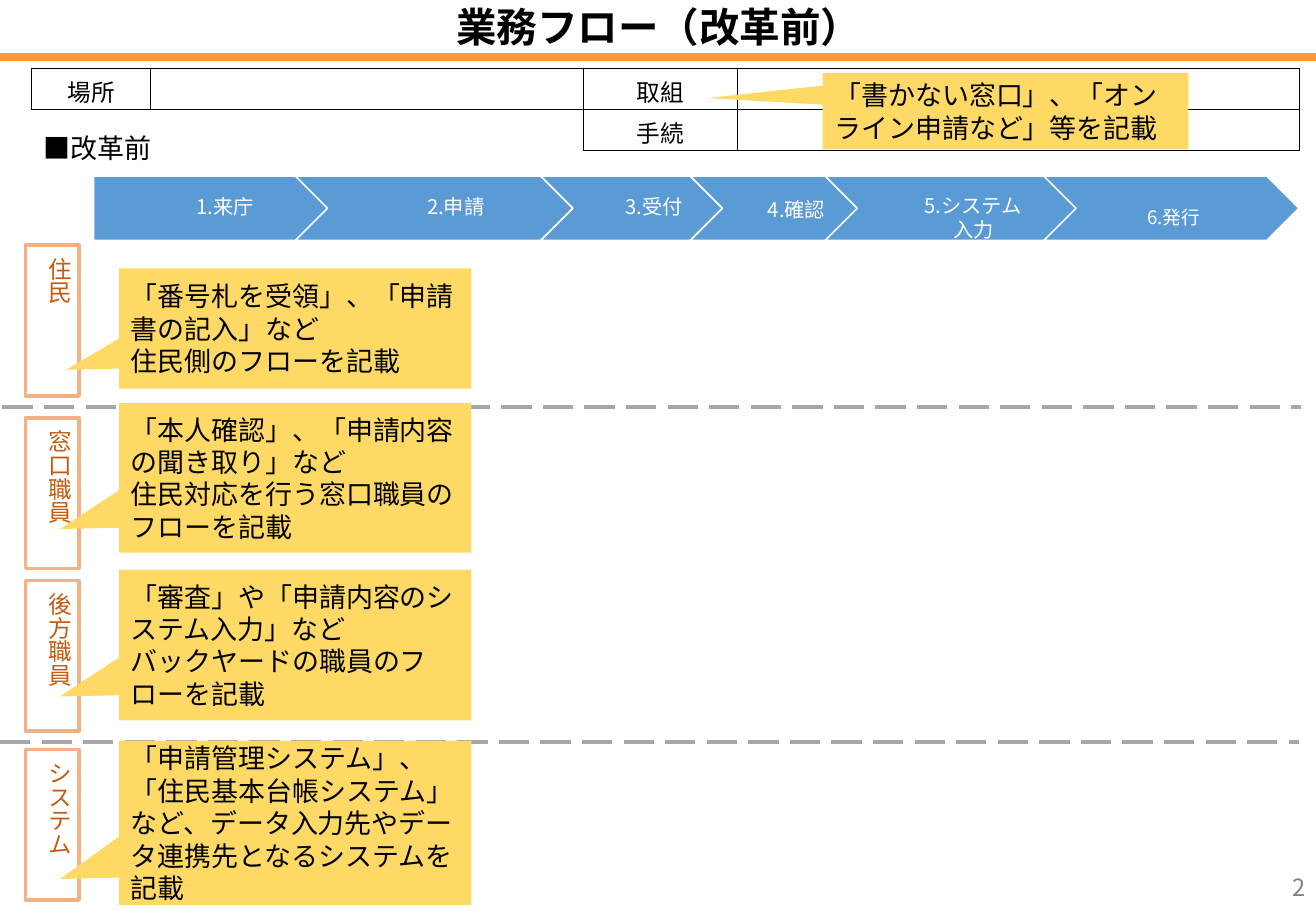
"""Build the pre-reform workflow slide with its step arrows, lanes and callouts."""
from dataclasses import dataclass

from lxml import etree
from pptx import Presentation
from pptx.dml.color import RGBColor
from pptx.enum.dml import MSO_LINE
from pptx.enum.shapes import MSO_CONNECTOR, MSO_SHAPE
from pptx.enum.text import MSO_ANCHOR, PP_ALIGN
from pptx.oxml.ns import qn
from pptx.util import Inches, Pt

RECT, CALLOUT = MSO_SHAPE.RECTANGLE, MSO_SHAPE.RECTANGULAR_CALLOUT
PENTAGON, CHEVRON = MSO_SHAPE.PENTAGON, MSO_SHAPE.CHEVRON
LEFT, CENTER, RIGHT = PP_ALIGN.LEFT, PP_ALIGN.CENTER, PP_ALIGN.RIGHT
TOP, MIDDLE = MSO_ANCHOR.TOP, MSO_ANCHOR.MIDDLE
STRAIGHT, LONG_DASH = MSO_CONNECTOR.STRAIGHT, MSO_LINE.LONG_DASH

CJK, LATIN = "Noto Sans CJK JP", "Calibri"
BLACK, WHITE, GRAY, DASH_GRAY = "000000", "FFFFFF", "808080", "A6A6A6"
ORANGE, PEACH, BROWN = "FF9933", "F4B183", "C55A11"
BLUE, YELLOW = "5B9BD5", "FFD966"
MARGINS = (0.1, 0.05, 0.1, 0.05)
STEP_TOP, STEP_HEIGHT = 1.45, 0.53
LANE_LEFT, LANE_WIDTH, LANE_HEIGHT = 0.21, 0.44, 1.24


@dataclass
class Style:
    size: float
    color: str = BLACK
    font: str = CJK
    align: PP_ALIGN = LEFT
    anchor: MSO_ANCHOR = MIDDLE
    bold: bool = False
    spacing: float | Pt | None = None
    after: float = 0
    margins: tuple[float, ...] = MARGINS


@dataclass
class Step:
    left: float
    width: float
    text_left: float
    text_width: float
    text: str
    style: Style


@dataclass
class Lane:
    top: float
    text: str


@dataclass
class Callout:
    box: tuple[float, float, float, float]
    tip: tuple[float, float]
    text: str


@dataclass
class Rule:
    start: float
    end: float
    y: float
    color: str
    width: float
    dashed: bool = True


@dataclass
class Grid:
    left: float
    widths: tuple[float, ...]
    labels: tuple[str, ...]


def step_style(top: float = 0.04, left: float = 0.05, bottom: float = 0.04, size: float = 12,
               spacing: float | Pt = 0.9, after: float = 0, anchor: MSO_ANCHOR = MIDDLE) -> Style:
    return Style(size, WHITE, align=CENTER, anchor=anchor, spacing=spacing, after=after,
                 margins=(left, top, 0.02, bottom))


HEADING = Style(24, align=CENTER, bold=True, spacing=0.9)
LABEL = Style(14, align=CENTER)
SECTION = Style(16, anchor=TOP)
LANE = Style(14, BROWN, anchor=TOP, margins=(0.05, 0.1, 0.04, 0.1))
NOTE = Style(16, font=LATIN)
PAGE = Style(14, GRAY, align=RIGHT)

HEADER_RULE = Rule(0, 10.83, 0.47, ORANGE, 5, False)
LANE_RULES = [Rule(0.02, 10.71, 3.35, DASH_GRAY, 2.25), Rule(0, 10.69, 6.11, DASH_GRAY, 2.25)]
GRIDS = [Grid(0.26, (0.98, 3.56), ("場所",)), Grid(4.8, (1.27, 4.62), ("取組", "手続"))]
STEPS = [
    Step(0.77, 2.25, 0.77, 2.12, "1.来庁", step_style(left=0.07, after=4.2)),
    Step(2.43, 2.62, 2.69, 2.09, "2.申請", step_style(after=4.2)),
    Step(4.45, 1.84, 4.72, 1.3, "3.受付", step_style(after=4.2)),
    Step(5.68, 1.71, 5.95, 1.18, "4.確認", step_style(0.2, spacing=Pt(14), anchor=TOP)),
    Step(6.79, 2.4, 7.06, 1.87, "5.システム\n入力", step_style(0.2, spacing=Pt(14))),
    Step(8.59, 2.1, 8.86, 1.57, "6.発行",
         step_style(0.12, bottom=0.03, size=11, spacing=Pt(16.8))),
]
LANES = [Lane(2.02, "住民"), Lane(3.44, "窓口職員"), Lane(4.78, "後方職員"), Lane(6.17, "システム")]
CALLOUTS = [
    Callout((0.98, 2.21, 2.9, 0.99), (-0.65, 0.342),
            "「番号札を受領」、「申請書の記入」など\n住民側のフローを記載"),
    Callout((0.98, 3.32, 2.9, 1.23), (-0.668, 0.342),
            "「本人確認」、「申請内容の聞き取り」など\n住民対応を行う窓口職員のフローを記載"),
    Callout((0.98, 4.69, 2.9, 1.24), (-0.668, 0.342),
            "「審査」や「申請内容のシステム入力」など\nバックヤードの職員のフローを記載"),
    Callout((0.98, 6.1, 2.9, 1.35), (-0.668, 0.342),
            "「申請管理システム」、「住民基本台帳システム」など、"
            "データ入力先やデータ連携先となるシステムを記載"),
    Callout((6.77, 0.6, 3.01, 0.63), (-0.815, -0.17),
            "「書かない窓口」、「オンライン申請など」等を記載"),
]


def rgb(color: str) -> RGBColor:
    return RGBColor.from_string(color)


def write(tf, text: str, style: Style) -> None:
    tf.text = text
    for p in tf.paragraphs:
        p.alignment = style.align
        p.line_spacing = style.spacing
        p.space_after = Pt(style.after)
        for r in p.runs:
            r.font.size, r.font.bold, r.font.name = Pt(style.size), style.bold, style.font
            r.font.color.rgb = rgb(style.color)
            etree.SubElement(r.font._element, qn("a:ea"), typeface=CJK)


def write_frame(tf, text: str, style: Style) -> None:
    write(tf, text, style)
    tf.word_wrap, tf.vertical_anchor = True, style.anchor
    tf.margin_left, tf.margin_top, tf.margin_right, tf.margin_bottom = map(Inches, style.margins)


def add_text(s, box: tuple[float, ...], text: str, style: Style) -> None:
    write_frame(s.shapes.add_textbox(*map(Inches, box)).text_frame, text, style)


def add_box(s, kind: MSO_SHAPE, box: tuple[float, ...], fill: str = "", line: str = "",
            width: float = 1):
    sp = s.shapes.add_shape(kind, *map(Inches, box))
    sp.shadow.inherit = False
    for part, color in ((sp.fill, fill), (sp.line.fill, line)):
        if color:
            part.solid()
            part.fore_color.rgb = rgb(color)
        else:
            part.background()
    if line:
        sp.line.width = Pt(width)
    return sp


def add_rule(s, rule: Rule) -> None:
    y = Inches(rule.y)
    line = s.shapes.add_connector(STRAIGHT, Inches(rule.start), y, Inches(rule.end), y)
    line.line.color.rgb, line.line.width = rgb(rule.color), Pt(rule.width)
    if rule.dashed:
        line.line.dash_style = LONG_DASH
    etree.SubElement(line._element.spPr, qn("a:effectLst"))


def add_grid(s, grid: Grid) -> None:
    rows, height = len(grid.labels), 0.34
    table = s.shapes.add_table(rows, 2, Inches(grid.left), Inches(0.56),
                               Inches(sum(grid.widths)), Inches(height * rows)).table
    for column, width in zip(table.columns, grid.widths):
        column.width = Inches(width)
    for i, label in enumerate(grid.labels):
        table.rows[i].height = Inches(height)
        write(table.cell(i, 0).text_frame, label, LABEL)
        table.cell(i, 1).margin_top = table.cell(i, 1).margin_bottom = 0
    for cell in table.iter_cells():
        cell.vertical_anchor = MIDDLE
        tc_pr = cell._tc.get_or_add_tcPr()
        for side in ("lnL", "lnR", "lnT", "lnB"):
            border = etree.SubElement(tc_pr, qn(f"a:{side}"), w=str(Pt(0.5)))
            fill = etree.SubElement(border, qn("a:solidFill"))
            etree.SubElement(fill, qn("a:srgbClr"), val=BLACK)
        cell.fill.background()


def add_lane(s, lane: Lane) -> None:
    sp = add_box(s, RECT, (LANE_LEFT, lane.top, LANE_WIDTH, LANE_HEIGHT), line=PEACH, width=2.25)
    write_frame(sp.text_frame, lane.text, LANE)
    sp.text_frame._txBody.bodyPr.set("vert", "eaVert")


def add_step(s, step: Step, kind: MSO_SHAPE) -> None:
    add_box(s, kind, (step.left, STEP_TOP, step.width, STEP_HEIGHT), BLUE, WHITE)
    add_text(s, (step.text_left, STEP_TOP, step.text_width, STEP_HEIGHT), step.text, step.style)


def add_callout(s, callout: Callout) -> None:
    sp = add_box(s, CALLOUT, callout.box, YELLOW)
    sp.adjustments[0], sp.adjustments[1] = callout.tip
    write_frame(sp.text_frame, callout.text, NOTE)


def main() -> None:
    prs = Presentation()
    prs.slide_width, prs.slide_height = Inches(10.83), Inches(7.5)
    s = prs.slides.add_slide(prs.slide_layouts[6])
    add_rule(s, HEADER_RULE)
    add_text(s, (0.48, 0.05, 9.88, 0.38), "業務フロー（改革前）", HEADING)
    for grid in GRIDS:
        add_grid(s, grid)
    add_text(s, (0.26, 1.03, 4.54, 0.37), "■改革前", SECTION)
    for lane in LANES:
        add_lane(s, lane)
    for rule in LANE_RULES:
        add_rule(s, rule)
    for i, step in enumerate(STEPS):
        add_step(s, step, CHEVRON if i else PENTAGON)
    for callout in CALLOUTS:
        add_callout(s, callout)
    add_text(s, (8.4, 7.1, 2.44, 0.4), "2", PAGE)
    prs.save("out.pptx")


if __name__ == "__main__":
    main()
